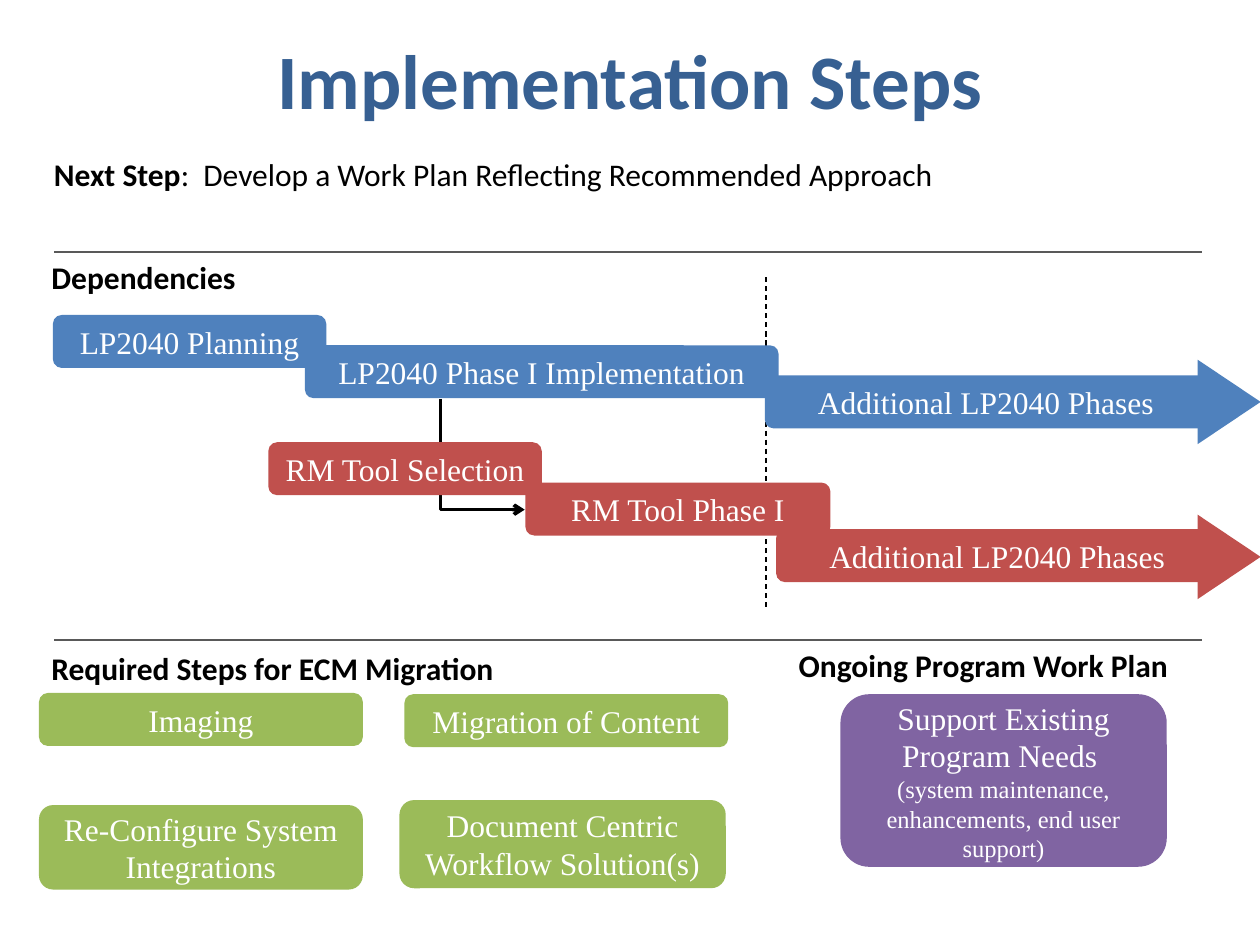
from lxml import etree
from pptx import Presentation
from pptx.dml.color import RGBColor
from pptx.enum.dml import MSO_LINE
from pptx.enum.shapes import MSO_CONNECTOR, MSO_SHAPE
from pptx.enum.text import MSO_ANCHOR, MSO_AUTO_SIZE, PP_ALIGN
from pptx.oxml.ns import qn
from pptx.util import Inches, Pt

ROUND, TRIANGLE = MSO_SHAPE.ROUNDED_RECTANGLE, MSO_SHAPE.ISOSCELES_TRIANGLE
STRAIGHT, ELBOW = MSO_CONNECTOR.STRAIGHT, MSO_CONNECTOR.ELBOW
DASH, CENTER, MIDDLE = MSO_LINE.DASH, PP_ALIGN.CENTER, MSO_ANCHOR.MIDDLE
GROW = MSO_AUTO_SIZE.SHAPE_TO_FIT_TEXT
BLUE, RED, GREEN, PURPLE = "4F81BD", "C0504D", "9BBB59", "8064A2"
rgb = RGBColor.from_string


def style(par, size, face, color, bold=False):
    font = par.font
    font.size, font.name, font.bold = Pt(size), face, bold
    font.color.rgb = rgb(color)


def wire(kind, ends, color, width):
    """Add a connector without a shadow."""
    link = slide.shapes.add_connector(kind, *map(Inches, ends))
    link.line.color.rgb = rgb(color)
    link.line.width = Pt(width)
    etree.SubElement(link._element.spPr, qn("a:effectLst"))
    return link


prs = Presentation()
prs.slide_width, prs.slide_height = Inches(10), Inches(7.5)
slide = prs.slides.add_slide(prs.slide_layouts[5])

title = slide.shapes.title
title.left, title.top = Inches(0.5), Inches(0)
title.width, title.height = Inches(9), Inches(1.25)
title.text_frame.text = "Implementation Steps"
title.text_frame.vertical_anchor = MIDDLE
title.text_frame.paragraphs[0].alignment = CENTER
style(title.text_frame.paragraphs[0], 44, "Calibri", "376092", True)

# Rules, and the dashed mark between the first and later phases
for y in (2, 5.08):
    wire(STRAIGHT, (0.43, y, 9.54, y), "595959", 0.75)
mark = wire(STRAIGHT, (6.08, 2.2, 6.08, 4.83), "000000", 0.75)
mark.line.dash_style = DASH

# One-bend arrow, turned so that it runs down and then right
bend = wire(ELBOW, (4.27, 3.27, 3.39, 3.94), "000000", 2)
props = bend._element.spPr
props.find(qn("a:xfrm")).set("rot", str(270 * 60000))
props.find(qn("a:prstGeom")).set("prst", "bentConnector2")
etree.SubElement(props.find(qn("a:ln")), qn("a:tailEnd"), type="arrow")

# Steps, from back to front: left, top, width, height, fill, lines
steps = [
    (6.07, 2.98, 3.51, 0.42, BLUE, ["Additional LP2040 Phases"]),
    (2.42, 2.74, 3.76, 0.42, BLUE, ["LP2040 Phase I Implementation"]),
    (0.42, 2.5, 2.17, 0.42, BLUE, ["LP2040 Planning"]),
    (2.13, 3.51, 2.17, 0.42, RED, ["RM Tool Selection"]),
    (4.17, 3.83, 2.42, 0.42, RED, ["RM Tool Phase I"]),
    (6.16, 4.2, 3.51, 0.42, RED, ["Additional LP2040 Phases"]),
    (0.31, 5.5, 2.57, 0.42, GREEN, ["Imaging"]),
    (3.21, 5.51, 2.57, 0.42, GREEN, ["Migration of Content"]),
    (0.31, 6.39, 2.57, 0.67, GREEN, ["Re-Configure System Integrations"]),
    (3.17, 6.35, 2.59, 0.7, GREEN, ["Document Centric Workflow Solution(s)"]),
    (6.67, 5.51, 2.59, 1.37, PURPLE,
     ["Support Existing Program Needs ",
      "(system maintenance, enhancements, end user support)"]),
]
for *place, fill, lines in steps:
    box = slide.shapes.add_shape(ROUND, *map(Inches, place))
    box.shadow.inherit = False
    box.fill.solid()
    box.fill.fore_color.rgb = rgb(fill)
    box.line.fill.background()
    frame = box.text_frame
    frame.word_wrap, frame.vertical_anchor = True, MIDDLE
    frame.text = "\n".join(lines)
    for par, size in zip(frame.paragraphs, (18, 14)):
        par.alignment = CENTER
        style(par, size, "Times New Roman", "FFFFFF")

# Arrow tips of the ongoing phases
for top, fill in ((2.94, BLUE), (4.17, RED)):
    tip = slide.shapes.add_shape(
        TRIANGLE, Inches(9.42), Inches(top), Inches(0.67), Inches(0.5))
    tip.rotation = 90
    tip.shadow.inherit = False
    tip.fill.solid()
    tip.fill.fore_color.rgb = rgb(fill)
    tip.line.fill.background()

# Headings: left, top, width, bold text, plain text
heads = [
    (0.33, 1.18, 9.09, "Next Step",
     ":  Develop a Work Plan Reflecting Recommended Approach"),
    (0.31, 2, 5.27, "Dependencies", ""),
    (0.31, 5.1, 5.27, "Required Steps for ECM Migration", ""),
    (6.24, 5.08, 3.42, "Ongoing Program Work Plan", ""),
]
for left, top, width, head, rest in heads:
    label = slide.shapes.add_textbox(
        Inches(left), Inches(top), Inches(width), Inches(0.4))
    frame = label.text_frame
    frame.word_wrap, frame.auto_size = True, GROW
    par = frame.paragraphs[0]
    style(par, 18, "Calibri", "000000", True)
    par.add_run().text = head
    if rest:
        run = par.add_run()
        run.text, run.font.bold = rest, False

prs.save("out.pptx")
